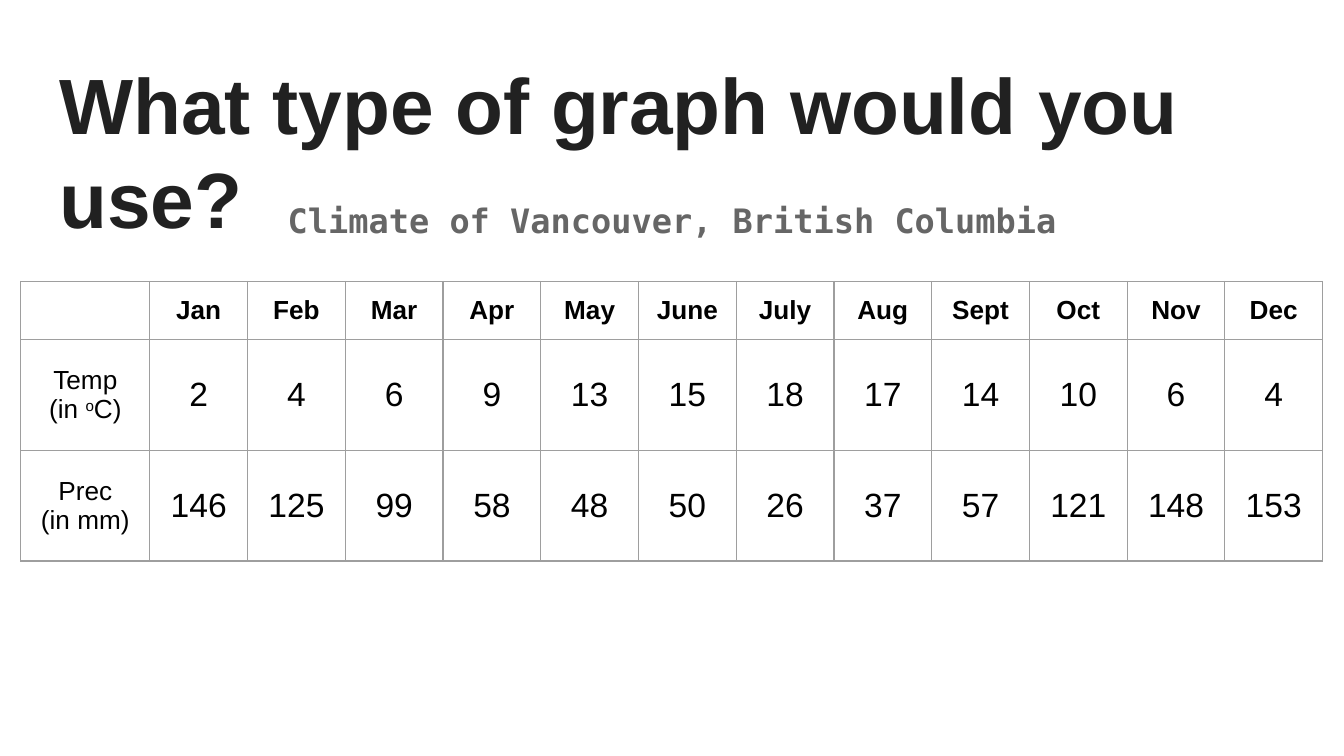
from dataclasses import dataclass

from lxml import etree
from pptx import Presentation
from pptx.dml.color import RGBColor
from pptx.enum.text import MSO_ANCHOR, PP_ALIGN
from pptx.oxml.ns import qn
from pptx.util import Emu, Pt

LEFT, CENTER = PP_ALIGN.LEFT, PP_ALIGN.CENTER
MIDDLE = MSO_ANCHOR.MIDDLE
EMU_PER_PX = 2286
MARGIN = 40
BORDER_SIDES = ("a:lnL", "a:lnR", "a:lnT", "a:lnB")


@dataclass(frozen=True)
class Theme:
    sans: str = "Arial"
    mono: str = "DejaVu Sans Mono"
    background: str = "FFFFFF"
    title: str = "212121"
    subtitle: str = "666666"
    ink: str = "000000"
    grid: str = "9E9E9E"
    title_size: int = 42
    value_size: int = 18
    label_size: int = 14
    border_width: float = 0.75


def px(length):
    return Emu(length * EMU_PER_PX)


class SlideBuilder:
    def __init__(self, deck, theme):
        self.theme = theme
        self.page = deck.slides.add_slide(deck.slide_layouts[6])
        fill = self.page.background.fill
        fill.solid()
        fill.fore_color.rgb = RGBColor.from_string(theme.background)

    def style(self, para, size, color, face, bold=False, align=CENTER):
        para.alignment = align
        font = para.font
        font.size, font.name, font.bold = Pt(size), face, bold
        font.color.rgb = RGBColor.from_string(color)

    def pad(self, target):
        target.margin_left = target.margin_right = px(MARGIN)
        target.margin_top = target.margin_bottom = px(MARGIN)

    def text(self, words, left, top, width, height, size, color, face, align, spacing):
        box = self.page.shapes.add_textbox(px(left), px(top), px(width), px(height))
        frame = box.text_frame
        frame.word_wrap = True
        self.pad(frame)
        para = frame.paragraphs[0]
        para.text = words
        para.line_spacing = spacing
        self.style(para, size, color, face, True, align)

    def border(self, cell):
        properties = cell._tc.get_or_add_tcPr()
        for side in BORDER_SIDES:
            line = etree.SubElement(properties, qn(side), w=str(Pt(self.theme.border_width)))
            fill = etree.SubElement(line, qn("a:solidFill"))
            etree.SubElement(fill, qn("a:srgbClr"), val=self.theme.grid)

    def cell(self, cell, lines, size, bold):
        self.border(cell)
        cell.fill.background()
        cell.vertical_anchor = MIDDLE
        self.pad(cell)
        if not lines:
            cell.margin_top = cell.margin_bottom = 0
        frame = cell.text_frame
        for index, spans in enumerate(lines):
            para = frame.add_paragraph() if index else frame.paragraphs[0]
            self.style(para, size, self.theme.ink, self.theme.sans, bold)
            for words, raised in spans:
                span = para.add_run()
                span.text = words
                if raised:
                    span._r.get_or_add_rPr().set("baseline", "30000")

    def table(self, rows, left, top, widths, heights):
        frame = self.page.shapes.add_table(
            len(rows), len(widths), px(left), px(top), px(sum(widths)), px(sum(heights))
        )
        table = frame.table
        table.first_row = table.horz_banding = False
        for column, width in zip(table.columns, widths):
            column.width = px(width)
        for row, height in zip(table.rows, heights):
            row.height = px(height)
        for row_index, (label, values) in enumerate(rows):
            header = row_index == 0
            value_size = self.theme.label_size if header else self.theme.value_size
            self.cell(table.cell(row_index, 0), label, self.theme.label_size, header)
            for column_index, value in enumerate(values, 1):
                self.cell(
                    table.cell(row_index, column_index), [[(value, False)]], value_size, header
                )


def main():
    theme = Theme()
    deck = Presentation()
    deck.slide_width, deck.slide_height = px(4000), px(2250)
    slide = SlideBuilder(deck, theme)

    slide.text("What type of graph would you use?", 137, 128, 3728, 352,
               theme.title_size, theme.title, theme.sans, LEFT, 1.0)
    slide.text("Climate of Vancouver, British Columbia", 136, 536, 3728, 1460,
               theme.value_size, theme.subtitle, theme.mono, CENTER, 1.15)

    months = "Jan Feb Mar Apr May June July Aug Sept Oct Nov Dec".split()
    temperatures = "2 4 6 9 13 15 18 17 14 10 6 4".split()
    precipitation = "146 125 99 58 48 50 26 37 57 121 148 153".split()
    temperature_label = [[("Temp", False)], [("(in ", False), ("o", True), ("C)", False)]]
    precipitation_label = [[("Prec", False)], [("(in mm)", False)]]
    rows = [
        ([], months),
        (temperature_label, temperatures),
        (precipitation_label, precipitation),
    ]
    slide.table(rows, 62, 838, [384] + [291] * len(months), [166, 329, 329])
    deck.save("out.pptx")


if __name__ == "__main__":
    main()
